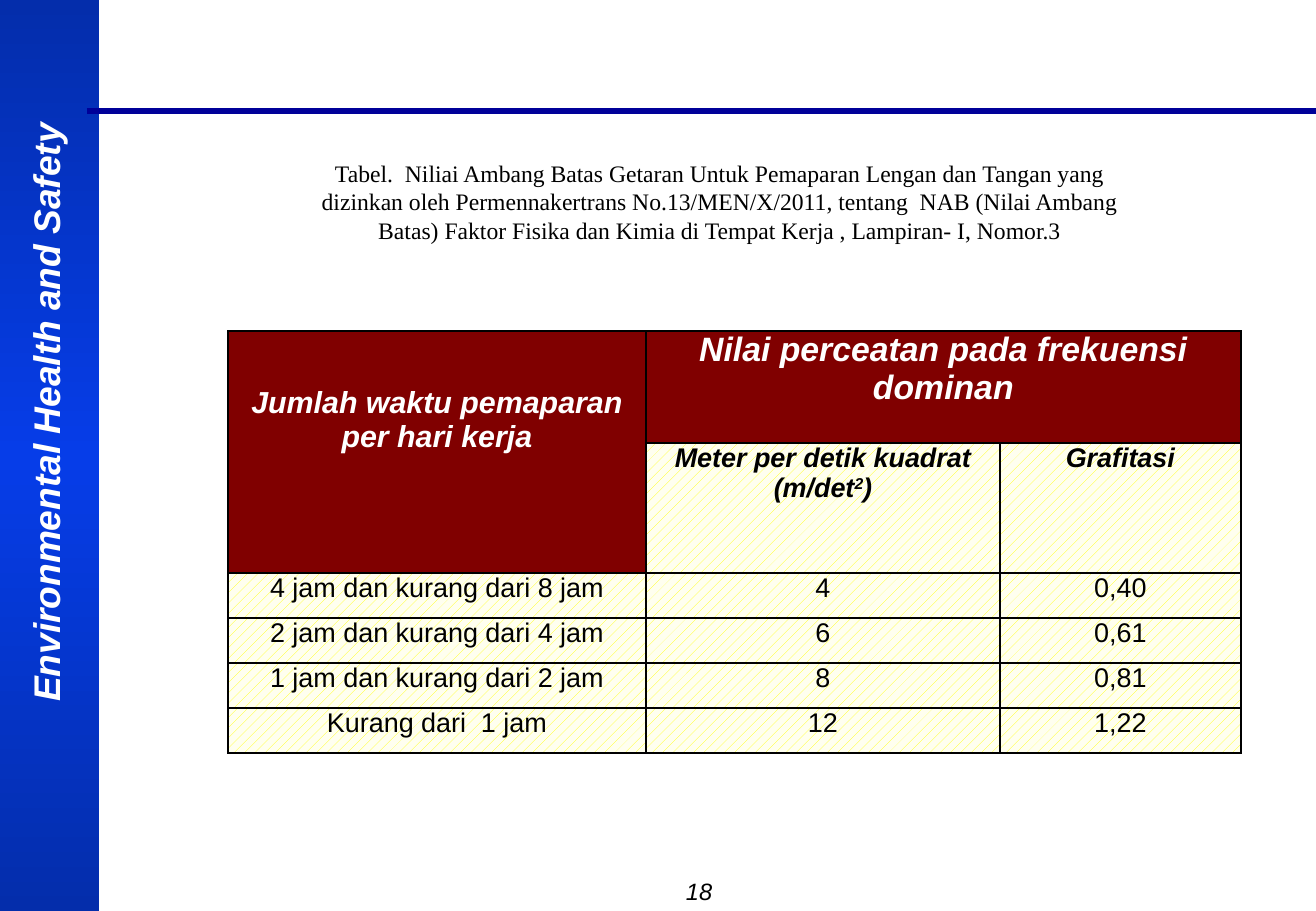
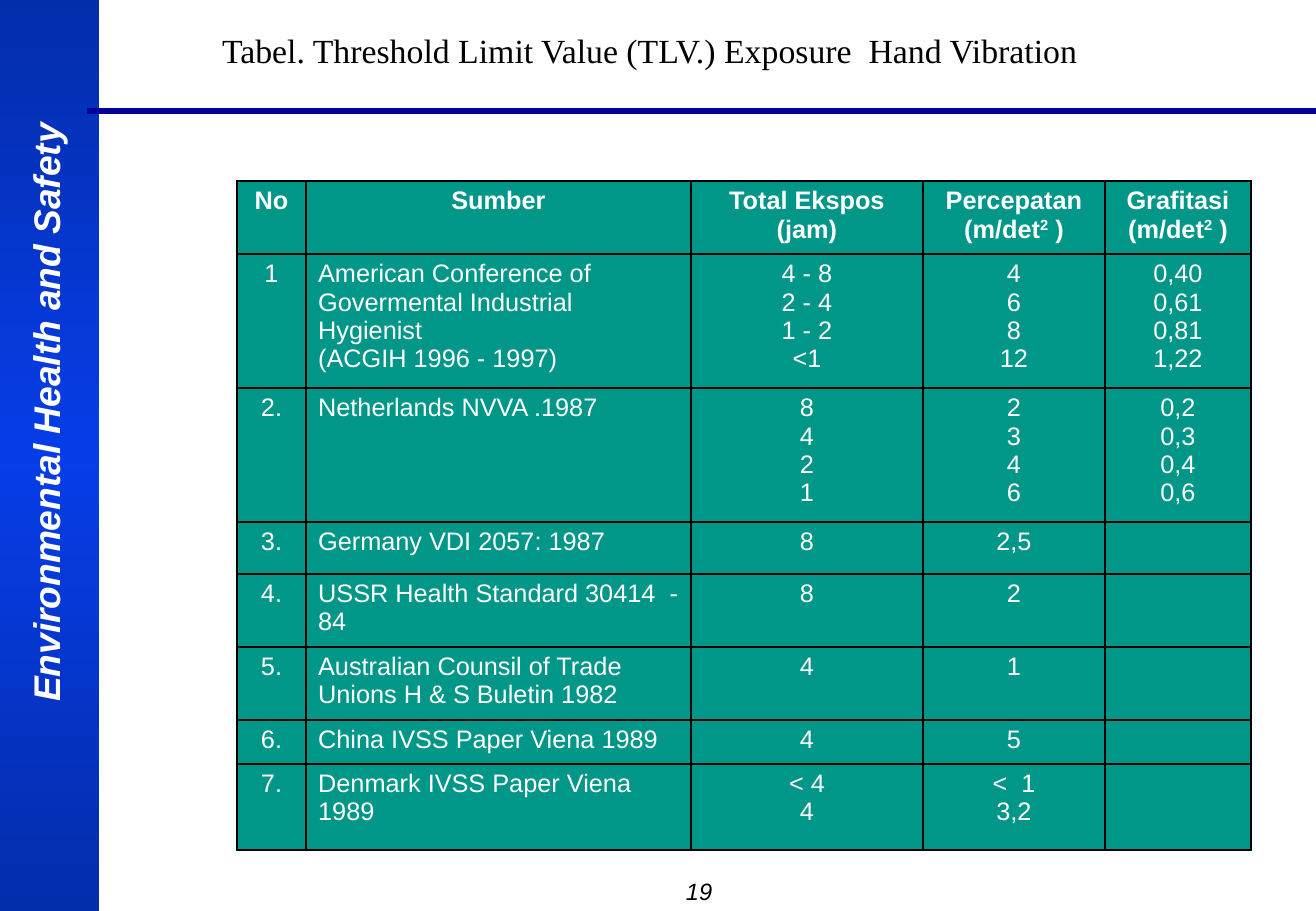
from copy import deepcopy

from lxml import etree
from pptx import Presentation
from pptx.dml.color import RGBColor
from pptx.enum.dml import MSO_PATTERN
from pptx.enum.shapes import MSO_CONNECTOR, MSO_SHAPE
from pptx.enum.text import MSO_ANCHOR, MSO_AUTO_SIZE, PP_ALIGN
from pptx.oxml.ns import qn
from pptx.util import Pt

PX = 7526
LEFT, CENTER = PP_ALIGN.LEFT, PP_ALIGN.CENTER
TOP, MIDDLE = MSO_ANCHOR.TOP, MSO_ANCHOR.MIDDLE
GROW = MSO_AUTO_SIZE.SHAPE_TO_FIT_TEXT
RECTANGLE, STRAIGHT = MSO_SHAPE.RECTANGLE, MSO_CONNECTOR.STRAIGHT
DOTTED = MSO_PATTERN.PERCENT_20

COLORS = {
    "band_edge": "042DAB", "band_middle": "063DE8", "rule": "000099",
    "black": "000000", "white": "FFFFFF", "maroon": "800000",
    "yellow": "FFFF00", "cream": "FFFFEF", "teal": "009688",
}

EXPOSURE_ROWS = [
    ["4 jam dan kurang dari 8 jam", "4", "0,40"],
    ["2 jam dan kurang dari 4 jam", "6", "0,61"],
    ["1 jam dan kurang dari 2 jam", "8", "0,81"],
    ["Kurang dari  1 jam", "12", "1,22"],
]

LIMIT_ROWS = [
    ["No", "Sumber", "Total Ekspos (jam)", "Percepatan\n(m/det^2^ )", "Grafitasi\n(m/det^2^ )"],
    ["1", "American Conference of Govermental Industrial Hygienist\n(ACGIH 1996 - 1997)",
     "4 - 8\n2 - 4\n1 - 2\n<1", "4\n6\n8\n12", "0,40\n0,61\n0,81\n1,22"],
    ["2.", "Netherlands NVVA .1987", "8\n4\n2\n1", "2\n3\n4\n6", "0,2\n0,3\n0,4\n0,6"],
    ["3.", "Germany VDI 2057: 1987", "8", "2,5", ""],
    ["4.", "USSR Health Standard 30414  - 84", "8", "2", ""],
    ["5.", "Australian Counsil of Trade  Unions H & S Buletin 1982", "4", "1", ""],
    ["6.", "China IVSS Paper Viena 1989", "4", "5", ""],
    ["7.", "Denmark IVSS Paper Viena 1989", "< 4\n4", "<  1\n3,2", ""],
]


def rgb(name):
    return RGBColor.from_string(COLORS[name])


def scaled(*lengths):
    return [length * PX for length in lengths]


def write(frame, text, size, color="black", bold=False, italic=False, align=CENTER, font="Arial"):
    for index, line in enumerate(text.split("\n")):
        para = frame.paragraphs[0] if index == 0 else frame.add_paragraph()
        para.alignment = align
        for part, words in enumerate(line.split("^")):
            if not words:
                continue
            span = para.add_run()
            span.text = words
            span.font.name = font
            span.font.size = Pt(size)
            span.font.bold = bold
            span.font.italic = italic
            span.font.color.rgb = rgb(color)
            if part % 2:
                span.font._element.set("baseline", "30000")


def add_text(page, area, text, size, wrap=True, anchor=TOP, **style):
    box = page.shapes.add_textbox(*scaled(*area))
    frame = box.text_frame
    frame.word_wrap = wrap
    frame.auto_size = GROW
    frame.vertical_anchor = anchor
    write(frame, text, size, **style)
    return box


def add_band(page, area):
    left, top, width, height = area
    band = page.shapes.add_shape(RECTANGLE, *scaled(*area))
    band.shadow.inherit = False
    band.line.fill.background()
    band.fill.gradient()
    band.fill.gradient_angle = 90
    stops = band._element.spPr.find(".//" + qn("a:gsLst"))
    stops.append(deepcopy(stops[0]))
    looks = [(0, "band_edge"), (0.5, "band_middle"), (1, "band_edge")]
    for stop, (position, color) in zip(band.fill.gradient_stops, looks):
        stop.position = position
        stop.color.rgb = rgb(color)
    length, depth = 747, 57
    label_area = (left + (width - length) // 2 - 4, top + 384, length, depth)
    label = add_text(page, label_area, "Environmental Health and Safety", 22,
                     color="white", bold=True, italic=True)
    label.rotation = 270


def add_rule(page, left, right, y):
    rule = page.shapes.add_connector(STRAIGHT, *scaled(left, y, right, y))
    rule.line.color.rgb = rgb("rule")
    rule.line.width = Pt(4)
    etree.SubElement(rule._element.spPr, qn("a:effectLst"))


def add_page(deck, number):
    page = deck.slides.add_slide(deck.slide_layouts[6])
    add_band(page, (0, 0, 99, 911))
    add_text(page, (674, 871, 53, 41), number, 14, wrap=False, italic=True, align=LEFT)
    add_rule(page, 87, 1316, 111)
    return page


def add_borders(cell):
    properties = cell._tc.get_or_add_tcPr()
    for side in ("lnL", "lnR", "lnT", "lnB"):
        line = etree.SubElement(properties, qn("a:" + side), w=str(Pt(1)))
        fill = etree.SubElement(line, qn("a:solidFill"))
        etree.SubElement(fill, qn("a:srgbClr"), val=COLORS["black"])


def add_grid(page, left, top, widths, heights):
    area = scaled(left, top, sum(widths), sum(heights))
    grid = page.shapes.add_table(len(heights), len(widths), *area).table
    grid.first_row = grid.horz_banding = False
    for column, width in zip(grid.columns, widths):
        column.width = width * PX
    for row, height in zip(grid.rows, heights):
        row.height = height * PX
    for cell in grid.iter_cells():
        add_borders(cell)
    return grid


def fill_solid(cell, color):
    cell.fill.solid()
    cell.fill.fore_color.rgb = rgb(color)


def fill_dotted(cell):
    cell.fill.patterned()
    cell.fill.pattern = DOTTED
    cell.fill.fore_color.rgb = rgb("yellow")
    cell.fill.back_color.rgb = rgb("cream")


def set_margins(cell, side, top=0):
    cell.margin_left = cell.margin_right = side * PX
    cell.margin_top = top * PX
    cell.margin_bottom = 0


def add_exposure_table(page, left, top):
    grid = add_grid(page, left, top, [418, 354, 241], [112, 130] + [45] * 4)
    grid.cell(0, 0).merge(grid.cell(1, 0))
    grid.cell(0, 1).merge(grid.cell(0, 2))
    heads = [
        (0, 0, "Jumlah waktu pemaparan per hari kerja", 18, 55),
        (0, 1, "Nilai perceatan pada frekuensi dominan", 20, 0),
        (1, 1, "Meter per detik kuadrat\n(m/det^2^)", 16, 0),
        (1, 2, "Grafitasi", 16, 0),
    ]
    for row, column, text, size, gap in heads:
        cell = grid.cell(row, column)
        set_margins(cell, 9, gap)
        if row == 0:
            fill_solid(cell, "maroon")
        else:
            fill_dotted(cell)
        write(cell.text_frame, text, size, "black" if row else "white", bold=True, italic=True)
    for row, texts in enumerate(EXPOSURE_ROWS, 2):
        for column, text in enumerate(texts):
            cell = grid.cell(row, column)
            set_margins(cell, 9)
            fill_dotted(cell)
            write(cell.text_frame, text, 16)


def add_limit_table(page, left, top):
    grid = add_grid(page, left, top, [69, 385, 232, 182, 146],
                    [72, 134, 134, 52, 73, 73, 44, 86])
    for row, texts in enumerate(LIMIT_ROWS):
        for column, text in enumerate(texts):
            cell = grid.cell(row, column)
            fill_solid(cell, "teal")
            if not text:
                set_margins(cell, 0)
            align = LEFT if row and column == 1 else CENTER
            write(cell.text_frame, text, 15, "white", bold=row == 0, align=align)


def build_exposure_page(deck):
    page = add_page(deck, "18")
    caption = (
        "Tabel.  Niliai Ambang Batas Getaran Untuk Pemaparan Lengan dan Tangan yang "
        "dizinkan oleh Permennakertrans No.13/MEN/X/2011, tentang  NAB (Nilai Ambang "
        "Batas) Faktor Fisika dan Kimia di Tempat Kerja , Lampiran- I, Nomor.3"
    )
    add_text(page, (299, 153, 842, 98), caption, 14, font="Times New Roman")
    add_exposure_table(page, 228, 331)


def build_limit_page(deck):
    page = add_page(deck, "19")
    add_limit_table(page, 237, 181)
    add_text(page, (210, 24, 880, 52),
             "Tabel. Threshold Limit Value (TLV.) Exposure  Hand Vibration", 20,
             wrap=False, anchor=MIDDLE, font="Times New Roman")


def main():
    deck = Presentation()
    deck.slide_width, deck.slide_height = scaled(1316, 911)
    build_exposure_page(deck)
    build_limit_page(deck)
    deck.save("out.pptx")


if __name__ == "__main__":
    main()
